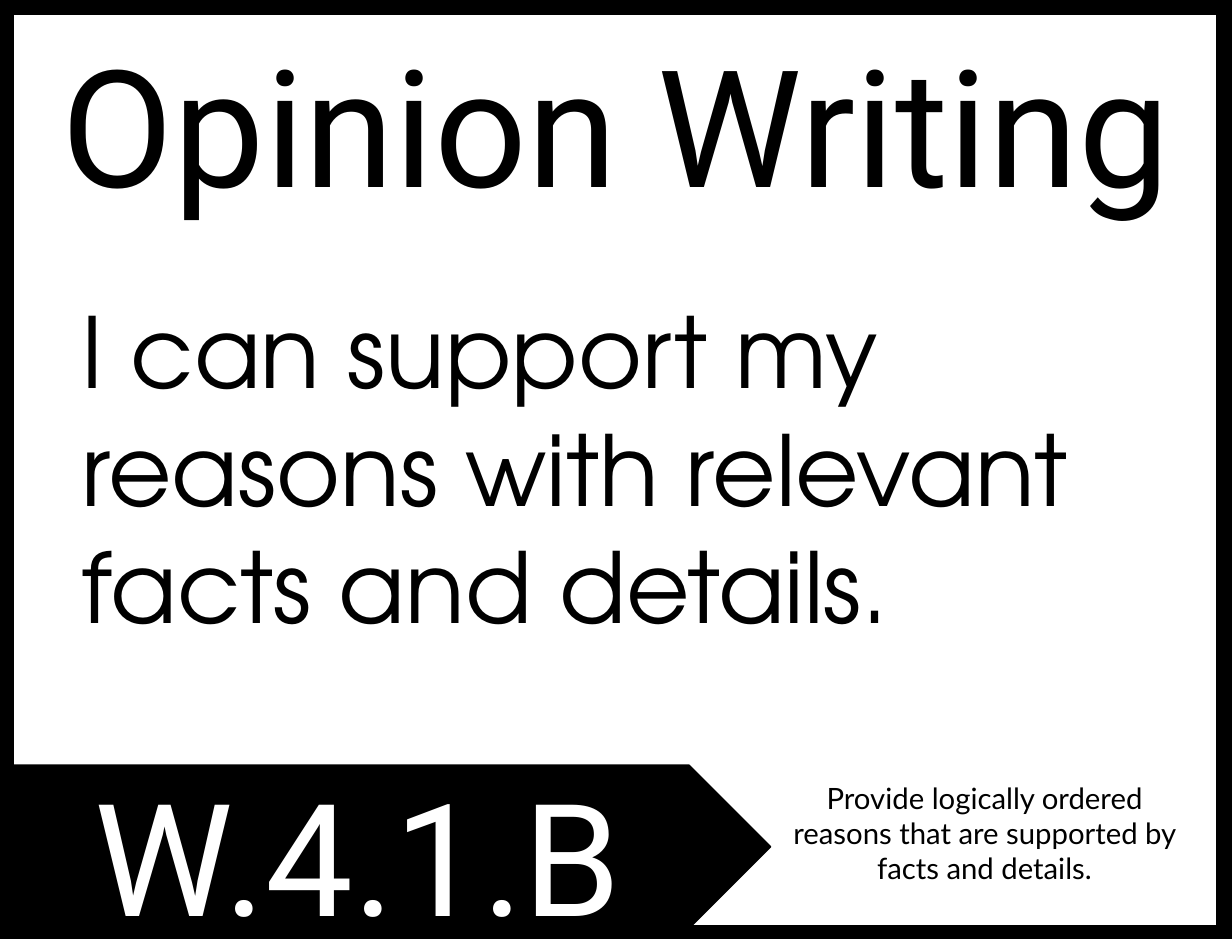
from dataclasses import dataclass

import pptx
import pptx.dml.color
import pptx.enum.shapes
import pptx.enum.text
import pptx.util

Cm = pptx.util.Cm
Pt = pptx.util.Pt
Kind = pptx.enum.shapes.MSO_SHAPE
Align = pptx.enum.text.PP_ALIGN

BLACK = "000000"
WHITE = "FFFFFF"


@dataclass
class Box:
    """A place on the slide, in centimetres."""
    left: float
    top: float
    width: float
    height: float

    def place(self) -> tuple:
        return Cm(self.left), Cm(self.top), Cm(self.width), Cm(self.height)


def paint(target, color: str) -> None:
    """Give a fill a solid colour."""
    target.solid()
    target.fore_color.rgb = pptx.dml.color.RGBColor.from_string(color)


def add_form(slide, kind, box: Box, color: str, line: float) -> None:
    form = slide.shapes.add_shape(kind, *box.place())
    form.shadow.inherit = False
    paint(form.fill, color)
    paint(form.line.fill, BLACK)
    form.line.width = Pt(line)


def add_text(slide, box: Box, text: str, *, font: str, size: float,
             color: str = BLACK, align=Align.CENTER) -> None:
    frame = slide.shapes.add_textbox(*box.place()).text_frame
    frame.word_wrap = True
    frame.auto_size = pptx.enum.text.MSO_AUTO_SIZE.SHAPE_TO_FIT_TEXT
    para = frame.paragraphs[0]
    para.alignment = align
    run = para.add_run()
    run.text = text
    run.font.name = font
    run.font.size = Pt(size)
    paint(run.font.fill, color)


def main() -> None:
    deck = pptx.Presentation()
    deck.slide_width, deck.slide_height = Cm(26.67), Cm(20.32)
    slide = deck.slides.add_slide(deck.slide_layouts[6])
    paint(slide.background.fill, BLACK)

    add_form(slide, Kind.RECTANGLE, Box(0.2, 0.23, 26.24, 19.89), WHITE, 6)
    add_form(slide, Kind.PENTAGON, Box(0.2, 16.56, 16.48, 3.53), BLACK, 1)

    add_text(slide, Box(1.24, 16.33, 13.03, 4.37), "W.4.1.B",
             font="Roboto", size=96, color=WHITE)
    add_text(slide, Box(16.69, 16.76, 9.25, 3.33),
             "Provide logically ordered reasons that are supported by "
             "facts and details.", font="Lato", size=18)
    add_text(slide, Box(0, 0.41, 26.67, 4.52), "Opinion Writing",
             font="Roboto", size=100)
    add_text(slide, Box(1.52, 6.17, 23.6, 7.95),
             "I can support my reasons with relevant facts and details.",
             font="TeX Gyre Adventor", size=60, align=Align.LEFT)

    deck.save("out.pptx")


if __name__ == "__main__":
    main()
